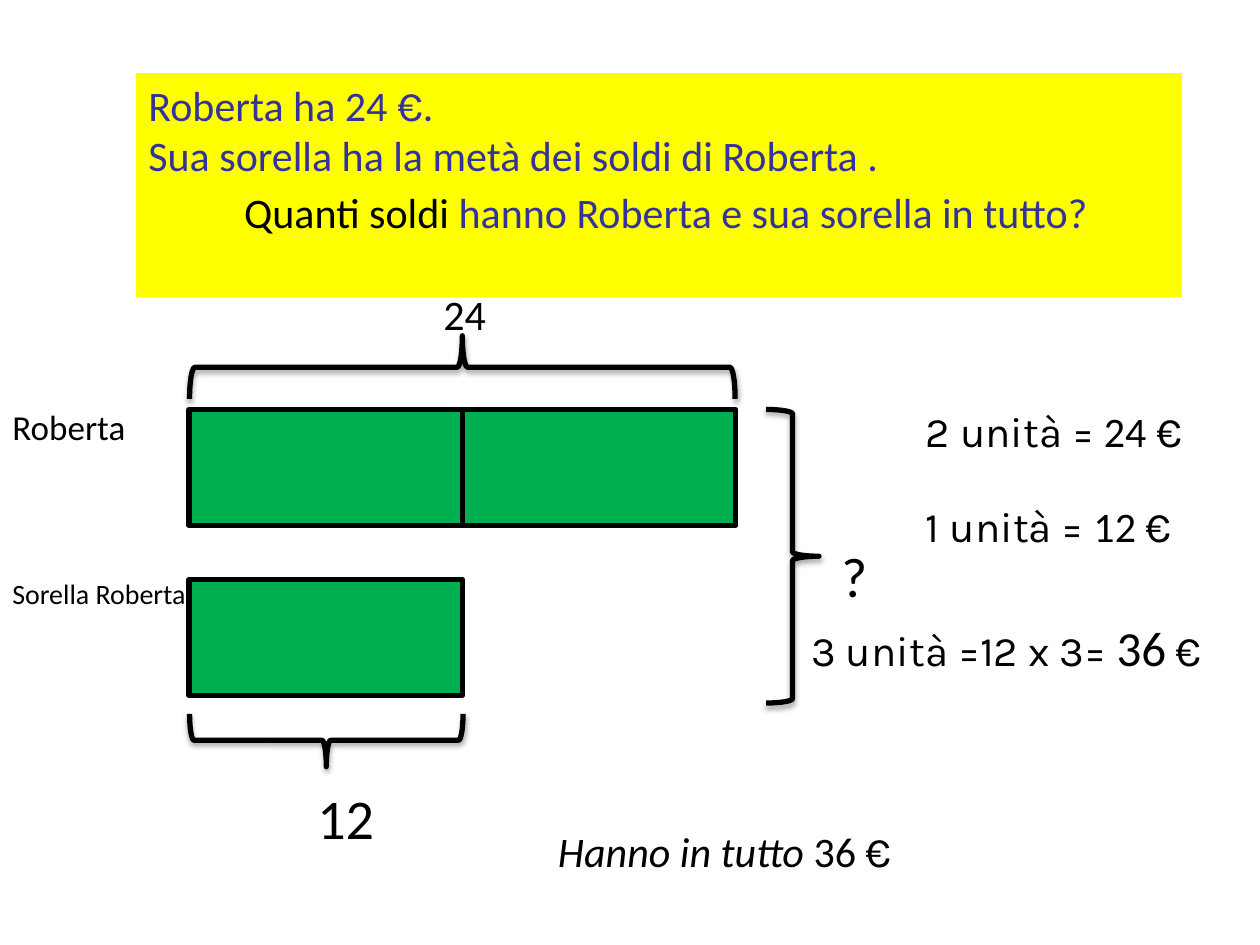
from lxml import etree
from pptx import Presentation
from pptx.dml.color import RGBColor
from pptx.enum import shapes, text
from pptx.oxml import parse_xml
from pptx.util import Inches, Pt

SHADOW = (
    '<a:outerShdw xmlns:a="http://schemas.openxmlformats.org/drawingml/2006/main" '
    'blurRad="40000" dist="23000" dir="5400000" rotWithShape="0">'
    '<a:srgbClr val="000000"><a:alpha val="35000"/></a:srgbClr></a:outerShdw>'
)


def rgb(value):
    return RGBColor.from_string(value)


def add_lines(tf, lines):
    """Fill a text frame; each line is a list of (text, size, font, colour, italic) runs."""
    tf.word_wrap = True
    tf.vertical_anchor = text.MSO_ANCHOR.TOP
    for i, runs in enumerate(lines):
        p = tf.paragraphs[0] if i == 0 else tf.add_paragraph()
        p.alignment = text.PP_ALIGN.LEFT
        for words, size, font, colour, italic in runs:
            r = p.add_run()
            r.text = words
            for name, value in {"size": Pt(size), "name": font, "italic": italic}.items():
                setattr(r.font, name, value)
            r.font.color.rgb = rgb(colour)


prs = Presentation()
prs.slide_width, prs.slide_height = Inches(10), Inches(7.5)
s = prs.slides.add_slide(prs.slide_layouts[6])

# Problem statement
BLUE, BLACK = "333399", "000000"
problem = s.shapes.add_shape(shapes.MSO_SHAPE.RECTANGLE,
                             Inches(1.08), Inches(0.58), Inches(8.3), Inches(1.78))
problem.shadow.inherit = False
problem.fill.solid()
problem.fill.fore_color.rgb = rgb("FFFF00")
problem.line.fill.background()
add_lines(problem.text_frame, [
    [("Roberta ha 24 ", 24, "Calibri", BLUE, False),
     ("€", 24, "Karla", BLUE, False),
     (".", 24, "Calibri", BLUE, False)],
    [("Sua sorella ha la metà dei soldi di Roberta .", 24, "Calibri", BLUE, False)],
    [("Quanti soldi ", 24, "Calibri", BLACK, False),
     ("hanno Roberta e sua sorella in tutto?", 24, "Calibri", BLUE, False)],
])
question = problem.text_frame.paragraphs[2]
question.space_before = Pt(3.5)
question._p.get_or_add_pPr().set("marL", str(Inches(0.76)))

# Bar model: two units for Roberta, one for her sister
UNIT, LEFT = 2.17, 1.5
for column, top in [(0, 4.6), (0, 3.25), (1, 3.25)]:
    bar = s.shapes.add_shape(shapes.MSO_SHAPE.RECTANGLE, Inches(LEFT + column * UNIT),
                             Inches(top), Inches(UNIT), Inches(0.92))
    bar.shadow.inherit = False
    bar.fill.solid()
    bar.fill.fore_color.rgb = rgb("00B050")
    bar.line.color.rgb = rgb(BLACK)
    bar.line.width = Pt(3)

# Braces: above Roberta's bar, beside both bars, below the sister's bar
for x, y, w, h, rotation in [(3.42, 0.75, 0.5, 4.33, 90),
                             (6.08, 3.25, 0.42, 2.33, 0),
                             (2.38, 4.79, 0.42, 2.17, 270)]:
    brace = s.shapes.add_shape(shapes.MSO_SHAPE.RIGHT_BRACE,
                               Inches(x), Inches(y), Inches(w), Inches(h))
    brace.rotation = rotation
    if rotation:
        brace._element.spPr.xfrm.set("flipH", "1")
    brace.fill.background()
    brace.line.color.rgb = rgb(BLACK)
    brace.line.width = Pt(3)
    brace.shadow.inherit = False
    effects = brace._element.spPr.find("{*}effectLst")
    effects.append(parse_xml(SHADOW))

# Labels, working and answer: position, then (text, size, font, italic) runs
EURO = ("€", 24, "Karla", False)
labels = [
    (0, 3.17, 1.42, 0.44, [("Roberta", 20, "Calibri", False)]),
    (0, 4.53, 2.17, 0.37, [("Sorella Roberta", 16, "Calibri", False)]),
    (3.42, 2.24, 0.67, 0.5, [("24", 24, "Calibri", False)]),
    (6.58, 4.25, 0.5, 0.64, [("?", 32, "Calibri", False)]),
    (7.25, 3.17, 2.42, 0.51, [("2 unità =", 24, "Karla", False),
                              (" 24 ", 24, "Calibri", False), EURO]),
    (7.25, 3.92, 2.42, 0.51, [("1 unità =", 24, "Karla", False),
                              (" 12 ", 24, "Calibri", False), EURO]),
    (6.34, 4.85, 3.66, 0.98, [("3 unità =12 x 3= ", 24, "Karla", False),
                              ("36", 28, "Calibri", False),
                              (" ", 24, "Calibri", False), EURO]),
    (2.42, 6.17, 1.31, 0.64, [("12", 32, "Calibri", False)]),
    (4.33, 6.5, 5.08, 0.5, [("Hanno in tutto ", 24, "Calibri", True),
                            ("36 ", 24, "Calibri", False), EURO]),
]
for x, y, w, h, runs in labels:
    label = s.shapes.add_textbox(Inches(x), Inches(y), Inches(w), Inches(h))
    add_lines(label.text_frame, [[(words, size, font, BLACK, italic)
                                  for words, size, font, italic in runs]])

prs.save("out.pptx")
